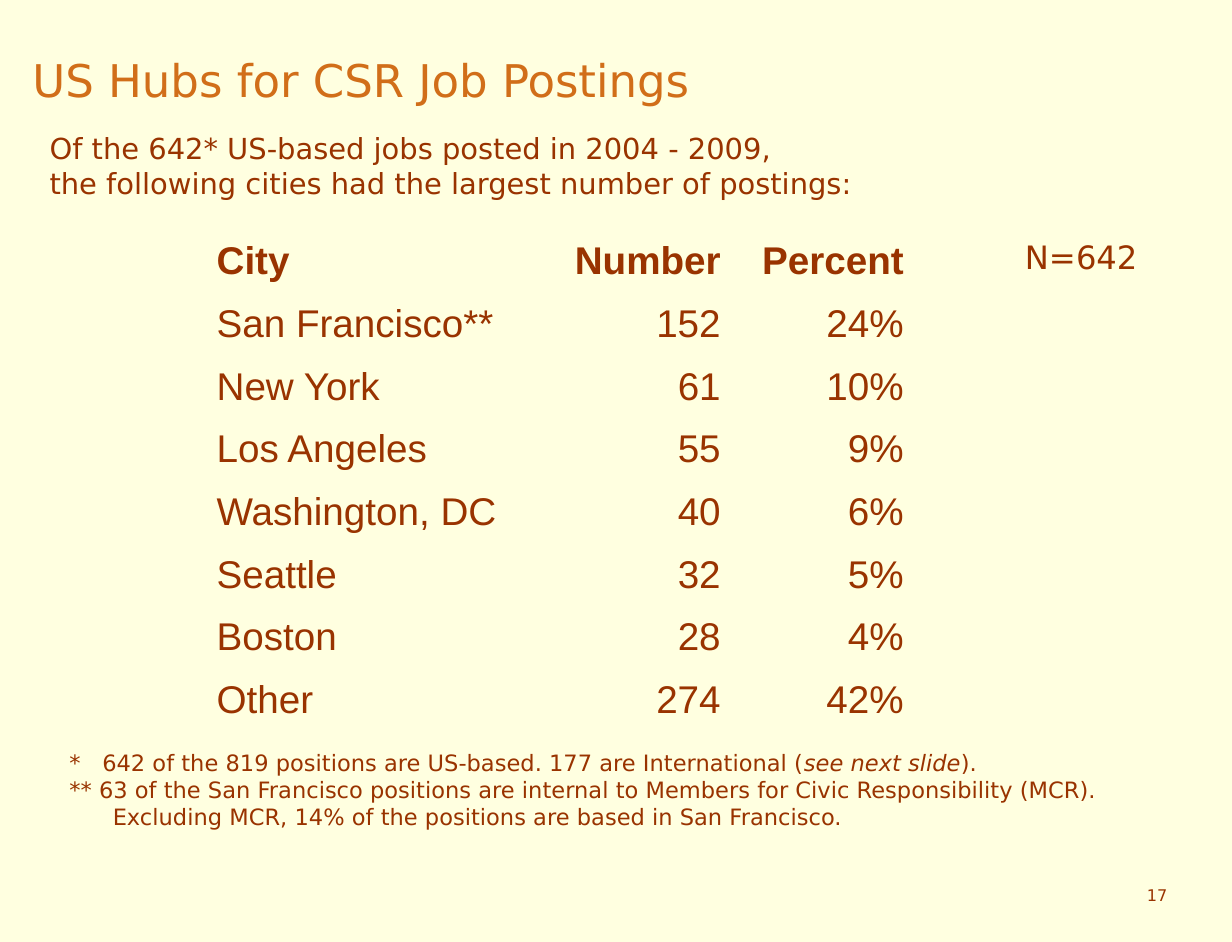
from dataclasses import dataclass

from pptx import Presentation
from pptx.dml.color import RGBColor
from pptx.enum.text import MSO_ANCHOR, PP_ALIGN
from pptx.util import Emu, Inches, Pt

LEFT, RIGHT = PP_ALIGN.LEFT, PP_ALIGN.RIGHT
TOP, MIDDLE, BOTTOM = MSO_ANCHOR.TOP, MSO_ANCHOR.MIDDLE, MSO_ANCHOR.BOTTOM
WIDTH, HEIGHT = Pt(765.75), Pt(585.75)
NO_GRID_STYLE = "{2D5ABB26-0587-4C30-8999-92F81FD0307C}"


@dataclass(frozen=True)
class Theme:
    background: str = "FFFFE0"
    accent: str = "D16E19"
    ink: str = "993300"
    font: str = "DejaVu Sans"
    table_font: str = "Arial"
    title: int = 28
    table: int = 24
    sample: int = 20
    intro: int = 18
    note: int = 14
    page: int = 10


THEME = Theme()

COLUMN_WIDTHS = (24.27, 16.83, 14.86)
ROW_HEIGHT = 6.66
HUBS = (
    ("City", "Number", "Percent"),
    ("San Francisco**", "152", "24%"),
    ("New York", "61", "10%"),
    ("Los Angeles", "55", "9%"),
    ("Washington, DC", "40", "6%"),
    ("Seattle", "32", "5%"),
    ("Boston", "28", "4%"),
    ("Other", "274", "42%"),
)
INTRO = (
    "Of the 642* US-based jobs posted in 2004 - 2009,",
    "the following cities had the largest number of postings:",
)
NOTES = (
    (
        ("*\t642 of the 819 positions are US-based. 177 are International (", False),
        ("see next slide", True),
        (").", False),
    ),
    (
        (
            "** 63 of the San Francisco positions are internal to Members for "
            "Civic Responsibility (MCR). Excluding MCR, 14% of the positions "
            "are based in San Francisco.",
            False,
        ),
    ),
)
NOTE_INDENTS = (20.5, 27)


def across(percent):
    return Emu(round(WIDTH * percent / 100))


def down(percent):
    return Emu(round(HEIGHT * percent / 100))


def add_run(p, text, size, color=THEME.ink, font=THEME.font, bold=False, italic=False):
    r = p.add_run()
    r.text = text
    r.font.size = Pt(size)
    r.font.name = font
    r.font.bold = bold
    r.font.italic = italic
    r.font.color.rgb = RGBColor.from_string(color)


def add_box(slide, left, top, width, height, insets=(0.1, 0.05), anchor=TOP, wrap=True):
    sp = slide.shapes.add_textbox(across(left), down(top), across(width), down(height))
    tf = sp.text_frame
    tf.word_wrap = wrap
    tf.vertical_anchor = anchor
    tf.margin_left = tf.margin_right = Inches(insets[0])
    tf.margin_top = tf.margin_bottom = Inches(insets[1])
    return tf


def add_lines(tf, lines, size, **style):
    for i, line in enumerate(lines):
        p = tf.add_paragraph() if i else tf.paragraphs[0]
        add_run(p, line, size, **style)


def add_notes(tf):
    for i, (parts, indent) in enumerate(zip(NOTES, NOTE_INDENTS)):
        p = tf.add_paragraph() if i else tf.paragraphs[0]
        pPr = p._p.get_or_add_pPr()
        pPr.set("marL", str(Pt(indent)))
        pPr.set("indent", str(-Pt(indent)))
        for text, italic in parts:
            add_run(p, text, THEME.note, italic=italic)


def fill_cell(cell, text, align, bold):
    cell.fill.background()
    cell.vertical_anchor = BOTTOM
    cell.margin_left = cell.margin_right = cell.margin_top = Inches(0.01)
    cell.margin_bottom = 0
    p = cell.text_frame.paragraphs[0]
    p.alignment = align
    add_run(p, text, THEME.table, font=THEME.table_font, bold=bold)


def add_hub_table(slide, left, top):
    frame = slide.shapes.add_table(
        len(HUBS), len(COLUMN_WIDTHS), across(left), down(top),
        across(sum(COLUMN_WIDTHS)), down(ROW_HEIGHT * len(HUBS)),
    )
    table = frame.table
    table.first_row = table.horz_banding = False
    table._tbl.tblPr[0].text = NO_GRID_STYLE
    for column, width in zip(table.columns, COLUMN_WIDTHS):
        column.width = across(width)
    for i, values in enumerate(HUBS):
        table.rows[i].height = down(ROW_HEIGHT)
        for j, value in enumerate(values):
            fill_cell(table.cell(i, j), value, RIGHT if j else LEFT, bold=i == 0)


def main():
    prs = Presentation()
    prs.slide_width = WIDTH
    prs.slide_height = HEIGHT
    slide = prs.slides.add_slide(prs.slide_layouts[6])
    slide.background.fill.solid()
    slide.background.fill.fore_color.rgb = RGBColor.from_string(THEME.background)

    title = add_box(slide, 2.63, 5.53, 65.54, 6.64, insets=(0, 0))
    add_lines(title, ["US Hubs for CSR Job Postings"], THEME.title, color=THEME.accent)
    page = add_box(slide, 93.09, 92.8, 3.1, 4.43, insets=(0, 0.05), anchor=MIDDLE, wrap=False)
    add_lines(page, ["17"], THEME.page)
    add_hub_table(slide, 17.49, 23.35)
    add_notes(add_box(slide, 4.7, 78.91, 89.32, 9.83))
    add_lines(add_box(slide, 3.1, 13.28, 90.08, 8.6), INTRO, THEME.intro)
    sample = add_box(slide, 82.27, 24.58, 11, 5.29, wrap=False)
    add_lines(sample, ["N=642"], THEME.sample)

    prs.save("out.pptx")


if __name__ == "__main__":
    main()
